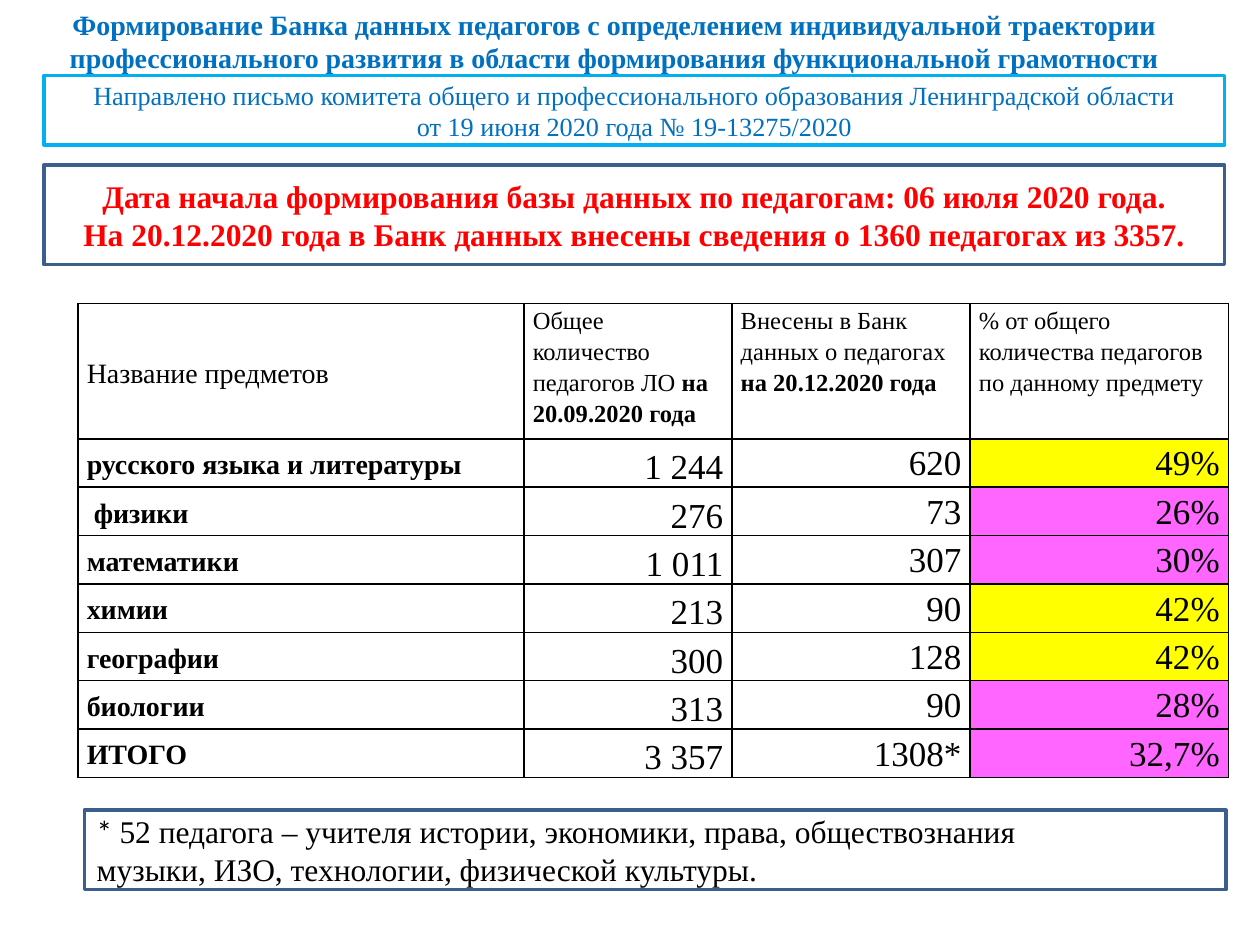
from lxml import etree
from pptx import Presentation
from pptx import util as u
from pptx.dml import color
from pptx.enum import shapes, text
from pptx.oxml import ns

SERIF = "Times New Roman"
BLACK, WHITE, BLUE, RED = "000000", "FFFFFF", "0070C0", "FF0000"
SKY, STEEL, YELLOW, PINK = "00B0F0", "3A5F8C", "FFFF00", "FF66FF"
LEFT, CENTER, RIGHT = text.PP_ALIGN.LEFT, text.PP_ALIGN.CENTER, text.PP_ALIGN.RIGHT
TOP, MIDDLE, BOTTOM = (text.MSO_ANCHOR.TOP, text.MSO_ANCHOR.MIDDLE,
                       text.MSO_ANCHOR.BOTTOM)

COLUMN_WIDTHS = [254.9, 118.8, 136.1, 147.6]
HEADER_HEIGHT, ROW_HEIGHT = 60.5, 27.4
HEADERS = [
    ["Название предметов"],
    [["Общее количество педагогов ЛО ", ("на 20.09.2020 года", {"bold": True})]],
    ["Внесены в Банк данных о педагогах", [("на 20.12.2020 года", {"bold": True})]],
    ["% от общего количества педагогов по данному предмету"],
]
SUBJECTS = [
    ("русского языка и литературы", "1 244", "620", "49%", YELLOW),
    ("физики", "276", "73", "26%", PINK),
    ("математики", "1 011", "307", "30%", PINK),
    ("химии", "213", "90", "42%", YELLOW),
    ("географии", "300", "128", "42%", YELLOW),
    ("биологии", "313", "90", "28%", PINK),
    ("ИТОГО", "3 357", "1308*", "32,7%", PINK),
]


def rgb(value):
    return color.RGBColor.from_string(value)


def write(frame, paragraphs, align=LEFT, spacing=None, **style):
    """Each paragraph is a string or a list of strings and (string, style) pairs."""
    frame.word_wrap = True
    for index, spans in enumerate(paragraphs):
        para = frame.add_paragraph() if index else frame.paragraphs[0]
        para.alignment = align
        if spacing:
            para.line_spacing = spacing
        for part in [spans] if isinstance(spans, str) else spans:
            words, extra = (part, {}) if isinstance(part, str) else part
            look = {"size": 16, "font": SERIF, "ink": BLACK, "bold": False,
                    **style, **extra}
            span = para.add_run()
            span.text = words
            span.font.size = u.Pt(look["size"])
            span.font.name = look["font"]
            span.font.bold = look["bold"]
            span.font.color.rgb = rgb(look["ink"])


def title(page, box):
    holder = page.shapes.add_textbox(*map(u.Pt, box))
    holder.text_frame.vertical_anchor = MIDDLE
    write(holder.text_frame,
          ["Формирование Банка данных педагогов с определением индивидуальной "
           "траектории профессионального развития в области формирования "
           "функциональной грамотности"],
          align=CENTER, ink=BLUE, bold=True)


def framed_note(page, box, border, paragraphs, **style):
    panel = page.shapes.add_shape(shapes.MSO_SHAPE.RECTANGLE, *map(u.Pt, box))
    panel.shadow.inherit = False
    panel.fill.solid()
    panel.fill.fore_color.rgb = rgb(WHITE)
    panel.line.color.rgb = rgb(border)
    panel.line.width = u.Pt(2)
    panel.text_frame.vertical_anchor = MIDDLE
    write(panel.text_frame, paragraphs, **style)


def add_borders(cell):
    properties = cell._tc.get_or_add_tcPr()
    for index, side in enumerate(("lnL", "lnR", "lnT", "lnB")):
        line = etree.Element(ns.qn(f"a:{side}"), w=str(u.Pt(1)))
        fill = etree.SubElement(line, ns.qn("a:solidFill"))
        etree.SubElement(fill, ns.qn("a:srgbClr"), val=BLACK)
        properties.insert(index, line)


def fill_cell(cell, paragraphs, anchor=TOP, back=WHITE, **style):
    cell.margin_left = cell.margin_right = u.Pt(5)
    cell.margin_top = cell.margin_bottom = 0
    cell.vertical_anchor = anchor
    cell.fill.solid()
    cell.fill.fore_color.rgb = rgb(back)
    add_borders(cell)
    write(cell.text_frame, paragraphs, spacing=1.15, **style)


def subject_table(page, left, top):
    height = HEADER_HEIGHT + ROW_HEIGHT * len(SUBJECTS)
    table = page.shapes.add_table(
        len(SUBJECTS) + 1, len(COLUMN_WIDTHS),
        *map(u.Pt, (left, top, sum(COLUMN_WIDTHS), height))).table
    table.first_row = table.horz_banding = False
    for column, width in zip(table.columns, COLUMN_WIDTHS):
        column.width = u.Pt(width)
    for index, row in enumerate(table.rows):
        row.height = u.Pt(ROW_HEIGHT if index else HEADER_HEIGHT)

    # Header row
    for index, paragraphs in enumerate(HEADERS):
        fill_cell(table.cell(0, index), paragraphs,
                  anchor=TOP if index else MIDDLE, size=14 if index else 16)

    # Subject rows
    for index, (name, total, entered, share, back) in enumerate(SUBJECTS, 1):
        fill_cell(table.cell(index, 0), [name], anchor=MIDDLE, bold=True)
        fill_cell(table.cell(index, 1), [total], anchor=BOTTOM, align=RIGHT, size=20)
        fill_cell(table.cell(index, 2), [entered], align=RIGHT, size=20)
        fill_cell(table.cell(index, 3), [share], back=back, align=RIGHT, size=20)
    table.cell(2, 0).margin_left = u.Pt(9)  # physics is set in slightly


def main():
    deck = Presentation()
    deck.slide_width, deck.slide_height = u.Pt(720), u.Pt(540)
    page = deck.slides.add_slide(deck.slide_layouts[6])

    title(page, (27, 3.6, 648, 39.6))
    subject_table(page, 44.6, 173.5)

    # Footnote
    framed_note(page, (48.2, 463, 652.3, 45.4), STEEL,
                [[("* ", {"font": "Calibri"}),
                  "52 педагога – учителя истории, экономики, права, обществознания"],
                 "музыки, ИЗО, технологии, физической культуры."], size=18)
    # Letter reference
    framed_note(page, (25.2, 43.2, 674.6, 39.6), SKY,
                ["Направлено письмо комитета общего и профессионального "
                 "образования Ленинградской области",
                 "от 19 июня 2020 года № 19-13275/2020"],
                align=CENTER, size=15, ink=BLUE)
    # Start date and progress
    framed_note(page, (25.2, 94.3, 674.6, 56.9), STEEL,
                ["Дата начала формирования базы данных по педагогам: 06 июля 2020 года.",
                 "На 20.12.2020 года в Банк данных внесены сведения о 1360 "
                 "педагогах из 3357."],
                align=CENTER, size=18, ink=RED, bold=True)

    deck.save("out.pptx")


if __name__ == "__main__":
    main()
